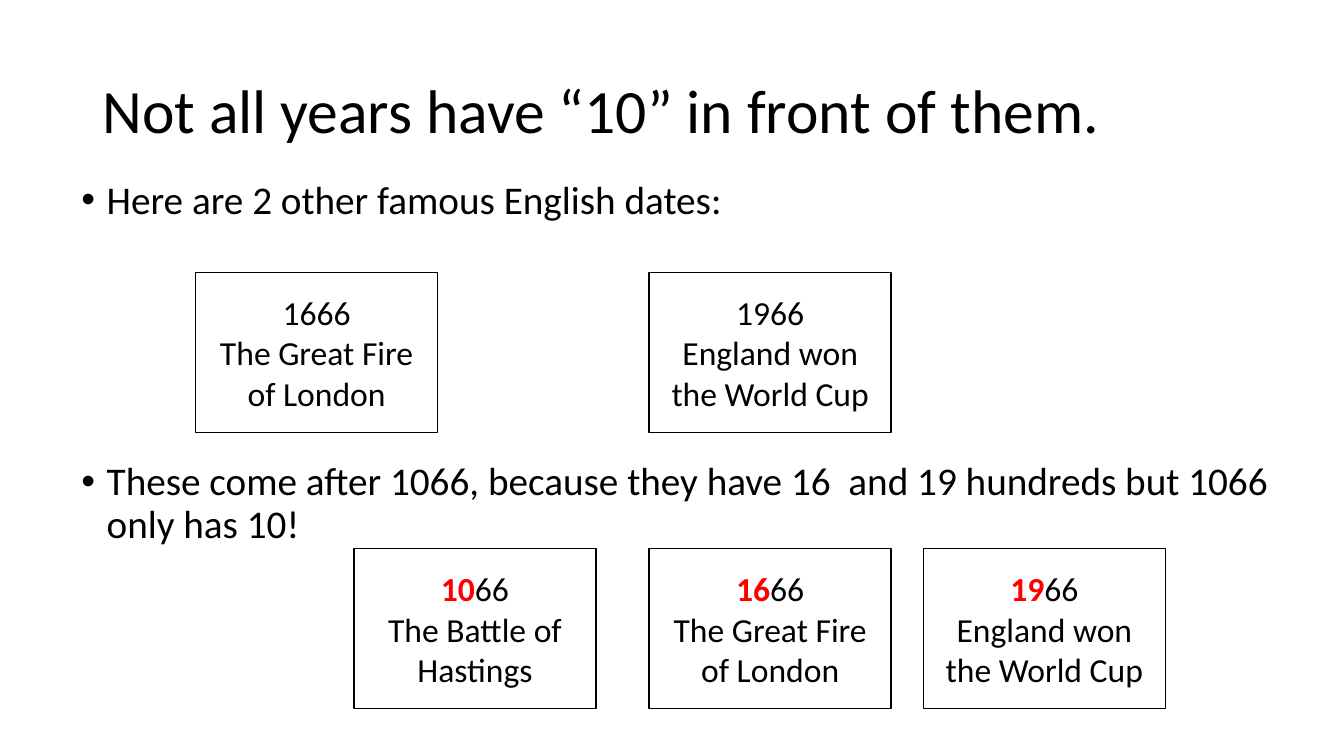
import pptx
import pptx.util
import pptx.dml.color
import pptx.enum.shapes
import pptx.enum.text
import lxml.etree
from pptx.util import Cm, Pt

BLACK = pptx.dml.color.RGBColor(0x00, 0x00, 0x00)
WHITE = pptx.dml.color.RGBColor(0xFF, 0xFF, 0xFF)
RED = pptx.dml.color.RGBColor(0xFF, 0x00, 0x00)
FONT = "Calibri"

CARD_WIDTH, CARD_HEIGHT = 6.1, 4.04
FIRE = "The Great Fire of London"
WORLD_CUP = "England won the World Cup"
HASTINGS = "The Battle of Hastings"


def add_span(para, text, size, color=BLACK, bold=False):
    """Add one formatted run to a paragraph."""
    span = para.add_run()
    span.text = text
    span.font.name = FONT
    span.font.size = Pt(size)
    span.font.bold = bold
    span.font.color.rgb = color


def add_text_frame(page, left, top, width, height, anchor):
    """Add a wrapping text box and return its text frame."""
    box = page.shapes.add_textbox(Cm(left), Cm(top), Cm(width), Cm(height))
    frame = box.text_frame
    frame.word_wrap = True
    frame.vertical_anchor = anchor
    return frame


def add_title(page, left, top, width, height, text):
    """Place the slide title in the given box."""
    frame = add_text_frame(page, left, top, width, height,
                           pptx.enum.text.MSO_ANCHOR.MIDDLE)
    para = frame.paragraphs[0]
    para.line_spacing = 0.9
    add_span(para, text, 44)


def add_bullets(page, left, top, width, height, texts, gap):
    """Place bulleted paragraphs, separated by a gap in points."""
    frame = add_text_frame(page, left, top, width, height,
                           pptx.enum.text.MSO_ANCHOR.TOP)
    for index, text in enumerate(texts):
        para = frame.paragraphs[0] if index == 0 else frame.add_paragraph()
        para.line_spacing = 0.9
        if index:
            para.space_before = Pt(gap)
        properties = para._p.get_or_add_pPr()
        indent = Cm(0.64)
        properties.set("marL", str(indent))
        properties.set("indent", str(-indent))
        namespace = properties.nsmap["a"]
        bullet_font = lxml.etree.SubElement(properties, f"{{{namespace}}}buFont")
        bullet_font.set("typeface", "Arial")
        bullet = lxml.etree.SubElement(properties, f"{{{namespace}}}buChar")
        bullet.set("char", "•")
        add_span(para, text, 28)


def add_card(page, left, top, year, event, highlight):
    """Place one date card, with its century in red when highlighted."""
    card = page.shapes.add_shape(pptx.enum.shapes.MSO_SHAPE.RECTANGLE,
                                 Cm(left), Cm(top), Cm(CARD_WIDTH), Cm(CARD_HEIGHT))
    card.shadow.inherit = False
    card.fill.solid()
    card.fill.fore_color.rgb = WHITE
    card.line.color.rgb = BLACK
    card.line.width = Pt(1)
    frame = card.text_frame
    frame.word_wrap = True
    frame.vertical_anchor = pptx.enum.text.MSO_ANCHOR.MIDDLE
    year_para = frame.paragraphs[0]
    event_para = frame.add_paragraph()
    for para in (year_para, event_para):
        para.alignment = pptx.enum.text.PP_ALIGN.CENTER
    if highlight:
        add_span(year_para, year[:2], 24, RED, True)
        add_span(year_para, year[2:], 24)
    else:
        add_span(year_para, year, 24)
    add_span(event_para, event, 24)


def add_card_row(page, top, cards, highlight):
    """Place a row of date cards at one height."""
    for left, year, event in cards:
        add_card(page, left, top, year, event, highlight)


def main():
    """Build the slide and save the deck."""
    deck = pptx.Presentation()
    deck.slide_width, deck.slide_height = Cm(33.87), Cm(19.05)
    page = deck.slides.add_slide(deck.slide_layouts[6])
    add_title(page, 2.33, 1.01, 29.21, 3.68,
              "Not all years have “10” in front of them.")
    add_bullets(page, 1.8, 4.42, 30.56, 13.82, [
        "Here are 2 other famous English dates:",
        "These come after 1066, because they have 16  and 19 hundreds but 1066 only has 10!",
    ], 171)
    add_card_row(page, 6.86, [(4.93, "1666", FIRE), (16.36, "1966", WORLD_CUP)], False)
    add_card_row(page, 13.82, [(8.92, "1066", HASTINGS), (16.36, "1666", FIRE),
                               (23.27, "1966", WORLD_CUP)], True)
    deck.save("out.pptx")


if __name__ == "__main__":
    main()
